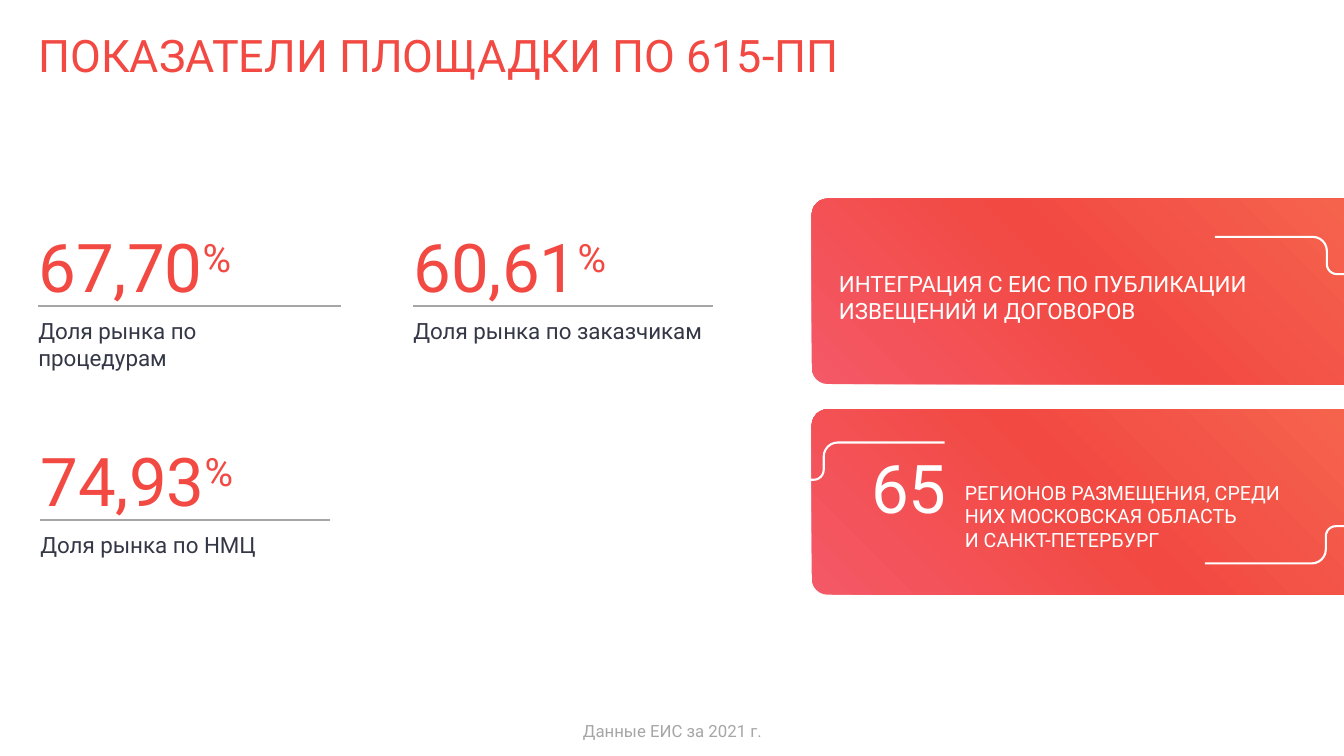
import copy
import math
from dataclasses import dataclass

import pptx
import pptx.dml.color
import pptx.enum.shapes
import pptx.enum.text
import pptx.oxml
import pptx.oxml.ns
import pptx.shapes.autoshape
import pptx.slide
import pptx.text.text
import pptx.util

Inches = pptx.util.Inches
Anchor = pptx.enum.text.MSO_ANCHOR
Align = pptx.enum.text.PP_ALIGN


@dataclass(frozen=True)
class Theme:
    font: str = "Roboto"
    red: str = "F24942"
    dark: str = "343846"
    gray: str = "A6A6A6"
    white: str = "FFFFFF"
    blend: tuple[tuple[float, str], ...] = ((0, "F45967"), (0.52, "F24942"), (1, "F5634D"))
    title: int = 32
    figure: int = 48
    body: int = 16
    small: int = 14
    note: int = 12
    line: float = 1.5


@dataclass(frozen=True)
class Metric:
    value: str
    label: str
    left: float
    top: float
    width: float
    rule: float


@dataclass(frozen=True)
class Bend:
    edge: float
    start: float
    stem: float
    end: float
    level: float


THEME = Theme()
METRICS = (
    Metric("67,70", "Доля рынка по процедурам", 0.38, 2.18, 2.97, 3.0),
    Metric("74,93", "Доля рынка по НМЦ", 0.4, 4.3, 2.25, 2.87),
    Metric("60,61", "Доля рынка по заказчикам", 4.1, 2.18, 2.97, 2.97),
)
BENDS = (
    Bend(13.33, 2.72, 13.16, 12.05, 2.35),
    Bend(7.98, 4.76, 8.17, 9.37, 4.39),
    Bend(13.33, 5.22, 13.15, 11.95, 5.59),
)
PANELS = (1.97, 4.06)


def rgb(code: str) -> pptx.dml.color.RGBColor:
    return pptx.dml.color.RGBColor.from_string(code)


def write(frame: pptx.text.text.TextFrame, text: str, *, size: int, color: str,
          sup: str = "", align: Align = Align.LEFT, anchor: Anchor = Anchor.TOP,
          inset: float = 0, space: float | None = None, grow: bool = True) -> None:
    """Fill a frame with one paragraph per line of text."""
    frame.word_wrap = True
    frame.vertical_anchor = anchor
    frame.margin_left = Inches(inset)
    fit = pptx.enum.text.MSO_AUTO_SIZE
    frame.auto_size = fit.SHAPE_TO_FIT_TEXT if grow else fit.NONE
    for i, line in enumerate(text.split("\n")):
        para = frame.paragraphs[0] if i == 0 else frame.add_paragraph()
        para.alignment = align
        if space:
            para.line_spacing = space
        for part in filter(None, (line, sup)):
            run = para.add_run()
            run.text = part
            run.font.name = THEME.font
            run.font.size = pptx.util.Pt(size)
            run.font.color.rgb = rgb(color)
            if part == sup:
                run.font._element.set("baseline", "30000")


def box(slide: pptx.slide.Slide, left: float, top: float, width: float,
        height: float) -> pptx.text.text.TextFrame:
    return slide.shapes.add_textbox(
        Inches(left), Inches(top), Inches(width), Inches(height)).text_frame


def panel(slide: pptx.slide.Slide, top: float) -> None:
    """Draw a gradient card, rounded on its left side, at the slide's edge."""
    left, long, short = 8.05, 5.28, 1.84
    shift = (long - short) / 2
    card = slide.shapes.add_shape(
        pptx.enum.shapes.MSO_SHAPE.ROUND_2_SAME_RECTANGLE,
        Inches(left + shift), Inches(top - shift), Inches(short), Inches(long))
    card.rotation = 270
    card.adjustments[0] = 0.087
    card.adjustments[1] = 0
    card.shadow.inherit = False
    card.line.fill.background()
    card.fill.gradient()
    card.fill.gradient_angle = 315
    stops = card._element.spPr.find(".//" + pptx.oxml.ns.qn("a:gsLst"))
    stops.insert(1, copy.deepcopy(stops[0]))
    for stop, (place, code) in zip(card.fill.gradient_stops, THEME.blend):
        stop.position = place
        stop.color.rgb = rgb(code)


def arc(x: float, y: float, rx: float, ry: float, first: int) -> list[tuple[float, float]]:
    """Return points of a quarter ellipse; first is its start angle, 0 or 90."""
    turns = [math.radians(abs(first - 15 * i)) for i in range(7)]
    return [(x + rx * math.cos(t), y + ry * math.sin(t)) for t in turns]


def bend(slide: pptx.slide.Slide, item: Bend) -> None:
    """Draw a line that runs in from the edge, turns along a stem and goes on."""
    side = math.copysign(1, item.edge - item.stem)
    down = math.copysign(1, item.level - item.start)
    near, far = 0.1, 0.14
    points = [(item.edge, item.start)]
    points += arc(item.stem + side * near, item.start + down * near,
                  -side * near, -down * near, 90)
    points += arc(item.stem - side * far, item.level - down * far,
                  side * far, down * far, 0)
    points.append((item.end, item.level))
    spots = [(Inches(x), Inches(y)) for x, y in points]
    draft = slide.shapes.build_freeform(*spots[0])
    draft.add_line_segments(spots[1:], close=False)
    shape = draft.convert_to_shape()
    shape.shadow.inherit = False
    shape.fill.background()
    shape.line.color.rgb = rgb(THEME.white)
    shape.line.width = pptx.util.Pt(THEME.line)


def rule(slide: pptx.slide.Slide, left: float, top: float, width: float) -> None:
    line = slide.shapes.add_connector(
        pptx.enum.shapes.MSO_CONNECTOR.STRAIGHT,
        Inches(left), Inches(top), Inches(left + width), Inches(top))
    line.line.color.rgb = rgb(THEME.gray)
    line.line.width = pptx.util.Pt(THEME.line)
    line._element.spPr.append(pptx.oxml.parse_xml(
        f"<a:effectLst {pptx.oxml.ns.nsdecls('a')}/>"))


def main() -> None:
    deck = pptx.Presentation()
    deck.slide_width, deck.slide_height = Inches(13.33), Inches(7.5)
    slide = deck.slides.add_slide(deck.slide_layouts[5])

    # Title
    title = slide.shapes.title
    title.left, title.top = Inches(0.38), Inches(0.22)
    title.width, title.height = Inches(11.45), Inches(0.72)
    write(title.text_frame, "ПОКАЗАТЕЛИ ПЛОЩАДКИ ПО 615-ПП", size=THEME.title,
          color=THEME.red, anchor=Anchor.MIDDLE, space=0.9, grow=False)

    # Market shares
    for item in METRICS:
        write(box(slide, item.left, item.top + 0.92, item.width, 0.37), item.label,
              size=THEME.body, color=THEME.dark)
        write(box(slide, item.left, item.top, 2.08, 0.91), item.value, sup="%",
              size=THEME.figure, color=THEME.red, anchor=Anchor.MIDDLE)
        rule(slide, item.left, item.top + 0.86, item.rule)

    # Source note
    write(box(slide, 5.31, 7.1, 2.72, 0.3), "Данные ЕИС за 2021 г.",
          size=THEME.note, color=THEME.gray, align=Align.CENTER, inset=0.1)

    # Cards and their text
    for top in PANELS:
        panel(slide, top)
    write(box(slide, 8.32, 2.63, 4.21, 0.64),
          "ИНТЕГРАЦИЯ С ЕИС ПО ПУБЛИКАЦИИ\nИЗВЕЩЕНИЙ И ДОГОВОРОВ",
          size=THEME.body, color=THEME.white)
    write(box(slide, 8.64, 4.37, 0.93, 0.91), "65", size=THEME.figure,
          color=THEME.white, anchor=Anchor.MIDDLE)
    write(box(slide, 9.57, 4.72, 3.57, 0.81),
          "РЕГИОНОВ РАЗМЕЩЕНИЯ, СРЕДИ\nНИХ МОСКОВСКАЯ ОБЛАСТЬ\nИ САНКТ-ПЕТЕРБУРГ",
          size=THEME.small, color=THEME.white)

    # Bent lines on the cards
    for item in BENDS:
        bend(slide, item)

    deck.save("out.pptx")


if __name__ == "__main__":
    main()
